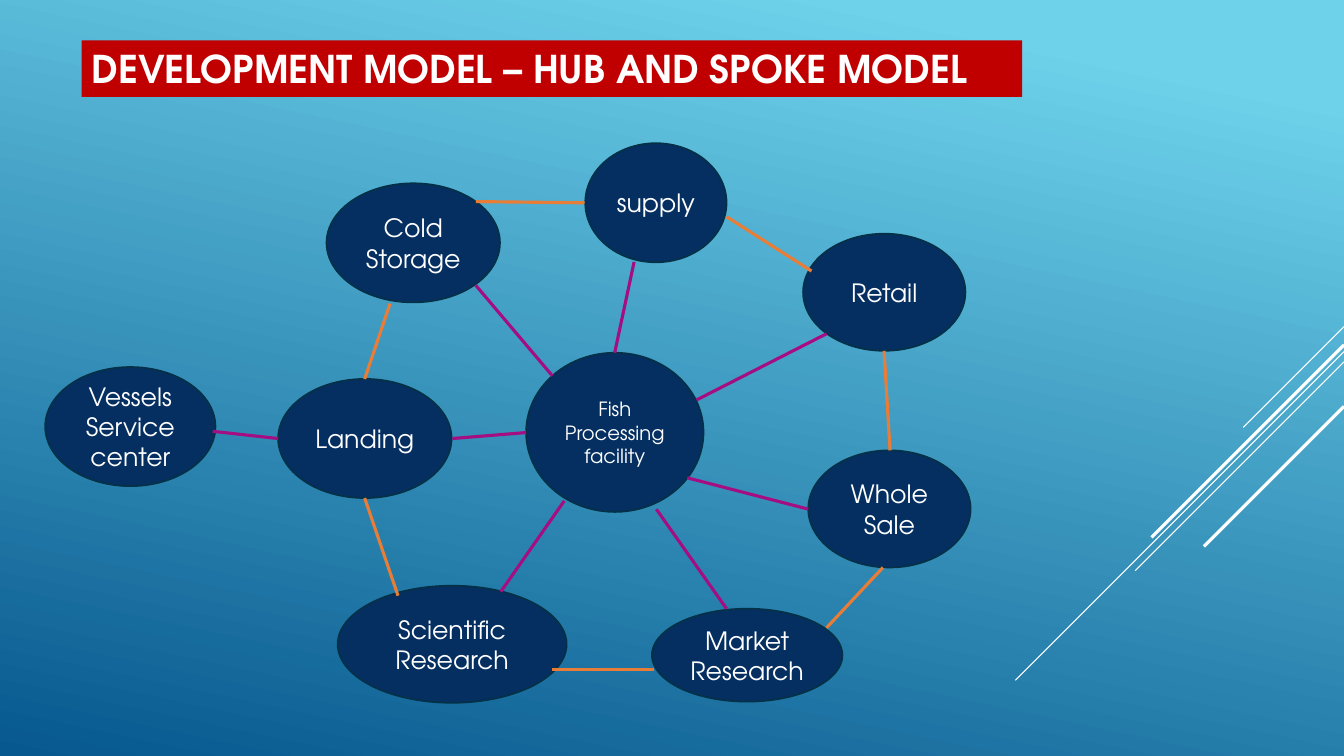
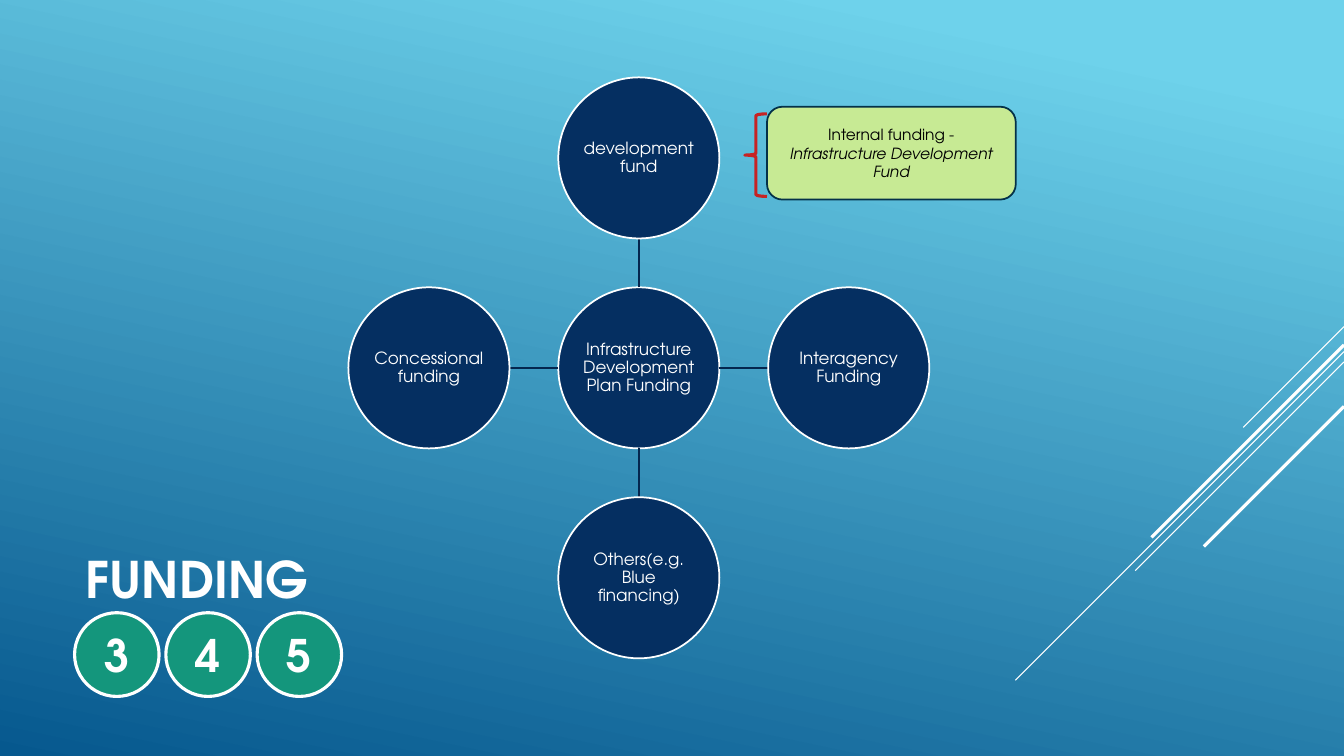
from dataclasses import dataclass

from lxml import etree
from pptx import Presentation
from pptx.dml.color import RGBColor
from pptx.enum import shapes, text
from pptx.oxml import ns
from pptx.util import Cm, Pt


@dataclass(frozen=True)
class Theme:
    font: str = "TeX Gyre Adventor"
    sky: str = "6ED2EB"
    deep: str = "06588E"
    white: str = "FFFFFF"
    black: str = "000000"
    navy: str = "052F61"
    outline: str = "043148"
    link: str = "04264E"
    spoke: str = "A50E82"
    rim: str = "E87D37"
    band: str = "C00000"
    green: str = "14967C"
    lime: str = "C7EA94"
    brace: str = "C62324"
    band_size: float = 27.3
    title_size: float = 36
    badge_size: float = 32
    node_size: float = 18
    hub_size: float = 14
    fund_size: float = 12
    note_size: float = 11
    thin: float = 0.75
    medium: float = 1.25
    thick: float = 2.25


T = Theme()
WIDTH, HEIGHT = 33.87, 19.05
KIND = shapes.MSO_SHAPE

# start y on the right edge, run to the left, line width
STREAKS = [
    (8.23, 2.54, T.thin),
    (8.86, 8.28, T.thin),
    (9.12, 5.26, T.thin),
    (8.69, 4.85, T.thick),
    (10.24, 3.53, T.thick),
]

# text, left, top, width, height
NODES = [
    ("supply", 14.75, 3.61, 3.56, 3),
    ("Vessels Service center", 1.14, 9.25, 4.29, 3),
    ("Market Research", 16.43, 15.34, 4.8, 2.34),
    ("Whole Sale", 20.37, 11.35, 4.09, 2.95),
    ("Scientific Research", 8.51, 14.76, 5.77, 2.95),
    ("Cold Storage", 8.23, 4.62, 4.37, 3),
    ("Landing", 7.01, 9.55, 4.37, 3),
    ("Retail", 20.24, 5.89, 4.09, 2.95),
]

# x1, y1, x2, y2
SPOKES = [
    (17.55, 10.08, 20.83, 8.41),
    (17.32, 12.04, 20.37, 12.83),
    (15.49, 8.89, 15.98, 6.6),
    (13.92, 9.47, 11.99, 7.19),
    (13.26, 10.9, 11.4, 11.05),
    (18.31, 15.34, 16.54, 12.83),
    (12.62, 14.91, 14.22, 12.62),
    (7.01, 11.05, 5.36, 10.87),
]
RIM = [
    (22.43, 11.35, 22.28, 8.84),
    (9.19, 9.55, 9.83, 7.65),
    (11.99, 5.08, 14.73, 5.11),
    (18.31, 5.46, 20.45, 6.83),
    (10.03, 15.01, 9.19, 12.55),
    (20.83, 15.82, 22.25, 14.3),
    (16.48, 16.87, 13.92, 16.87),
]

# text, direction from the centre
FUNDS = [
    ("development fund", 0, -1),
    ("Interagency Funding", 1, 0),
    ("Others(e.g. Blue financing)", 0, 1),
    ("Concessional funding", -1, 0),
]


def rgb(value):
    return RGBColor.from_string(value)


def add_run(p, content, size, color=T.white, bold=False, italic=False):
    r = p.add_run()
    r.text = content
    f = r.font
    f.name, f.size, f.bold, f.italic = T.font, Pt(size), bold, italic
    f.color.rgb = rgb(color)


def write(sp, content, size, align="CENTER", inset=None, spacing=None, **fmt):
    """Put one formatted run into a shape and return its paragraph."""
    tf = sp.text_frame
    tf.word_wrap = True
    tf.vertical_anchor = text.MSO_ANCHOR.MIDDLE
    if inset is not None:
        tf.margin_left = tf.margin_right = Cm(inset)
        tf.margin_top = tf.margin_bottom = Cm(inset)
    p = tf.paragraphs[0]
    p.alignment = text.PP_ALIGN[align]
    p.line_spacing = spacing
    add_run(p, content, size, **fmt)
    return p


def add_shape(s, kind, box, fill=None, line=None, weight=T.medium):
    sp = s.shapes.add_shape(kind, *map(Cm, box))
    sp.shadow.inherit = False
    if fill:
        sp.fill.solid()
        sp.fill.fore_color.rgb = rgb(fill)
    else:
        sp.fill.background()
    if line:
        sp.line.color.rgb = rgb(line)
        sp.line.width = Pt(weight)
    else:
        sp.line.fill.background()
    return sp


def add_line(s, ends, color, weight):
    cx = s.shapes.add_connector(shapes.MSO_CONNECTOR.STRAIGHT, *map(Cm, ends))
    cx.line.color.rgb = rgb(color)
    cx.line.width = Pt(weight)
    etree.SubElement(cx._element.spPr, ns.qn("a:effectLst"))


def add_hub_node(s, label, *box, size=T.node_size):
    sp = add_shape(s, KIND.OVAL, box, T.navy, T.outline)
    write(sp, label, size)


def add_fund(s, label, x, y, diameter):
    """Draw a funding circle centred on x, y."""
    box = (x - diameter / 2, y - diameter / 2, diameter, diameter)
    sp = add_shape(s, KIND.OVAL, box, T.navy, T.white)
    write(sp, label, T.fund_size, inset=0, spacing=0.9)


def set_background(master):
    fill = master.background.fill
    fill.gradient()
    fill.gradient_angle = 360 - 102
    for stop, color, position in zip(fill.gradient_stops, (T.sky, T.deep), (0.1, 1)):
        stop.color.rgb = rgb(color)
        stop.position = position


def new_slide(prs):
    s = prs.slides.add_slide(prs.slide_layouts[6])
    for y, run, weight in STREAKS:
        add_line(s, (WIDTH, y, WIDTH - run, y + run), T.white, weight)
    return s


def build_hub_slide(prs):
    s = new_slide(prs)
    add_hub_node(s, "Fish Processing facility", 13.26, 8.89, 4.47, 4.01, size=T.hub_size)
    for node in NODES:
        add_hub_node(s, *node)
    for lines, color in ((SPOKES, T.spoke), (RIM, T.rim)):
        for ends in lines:
            add_line(s, ends, color, T.thick)
    band = add_shape(s, KIND.RECTANGLE, (2.06, 1.02, 23.7, 1.42), T.band)
    write(band, "DEVELOPMENT MODEL – HUB AND SPOKE MODEL", T.band_size, align="LEFT", bold=True)


def build_funding_slide(prs):
    s = new_slide(prs)
    title = s.shapes.add_textbox(*map(Cm, (1.9, 12.47, 23.7, 4.19)))
    write(title, "FUNDING", T.title_size, align="LEFT", bold=True)

    x, y, diameter, pitch = 16.1, 9.27, 4.06, 5.29
    near, far = diameter / 2, pitch - diameter / 2
    add_fund(s, "Infrastructure Development Plan Funding", x, y, diameter)
    for label, dx, dy in FUNDS:
        ends = (x + dx * near, y + dy * near, x + dx * far, y + dy * far)
        add_line(s, ends, T.link, T.medium)
        add_fund(s, label, x + dx * pitch, y + dy * pitch, diameter)

    for i, digit in enumerate("345"):
        badge = add_shape(s, KIND.OVAL, (1.88 + i * 2.3, 15.44, 2.13, 2.11),
                          T.green, T.white, T.thick)
        write(badge, digit, T.badge_size, bold=True)

    note = add_shape(s, KIND.ROUNDED_RECTANGLE, (19.33, 2.69, 6.27, 2.34), T.lime, T.outline)
    p = write(note, "Internal funding - ", T.note_size, color=T.black)
    add_run(p, "Infrastructure Development Fund", T.note_size, T.black, italic=True)
    add_shape(s, KIND.LEFT_BRACE, (18.77, 2.87, 0.56, 2.08), line=T.brace, weight=T.thick)


def main():
    prs = Presentation()
    prs.slide_width, prs.slide_height = Cm(WIDTH), Cm(HEIGHT)
    set_background(prs.slide_master)
    build_hub_slide(prs)
    build_funding_slide(prs)
    prs.save("out.pptx")


if __name__ == "__main__":
    main()
